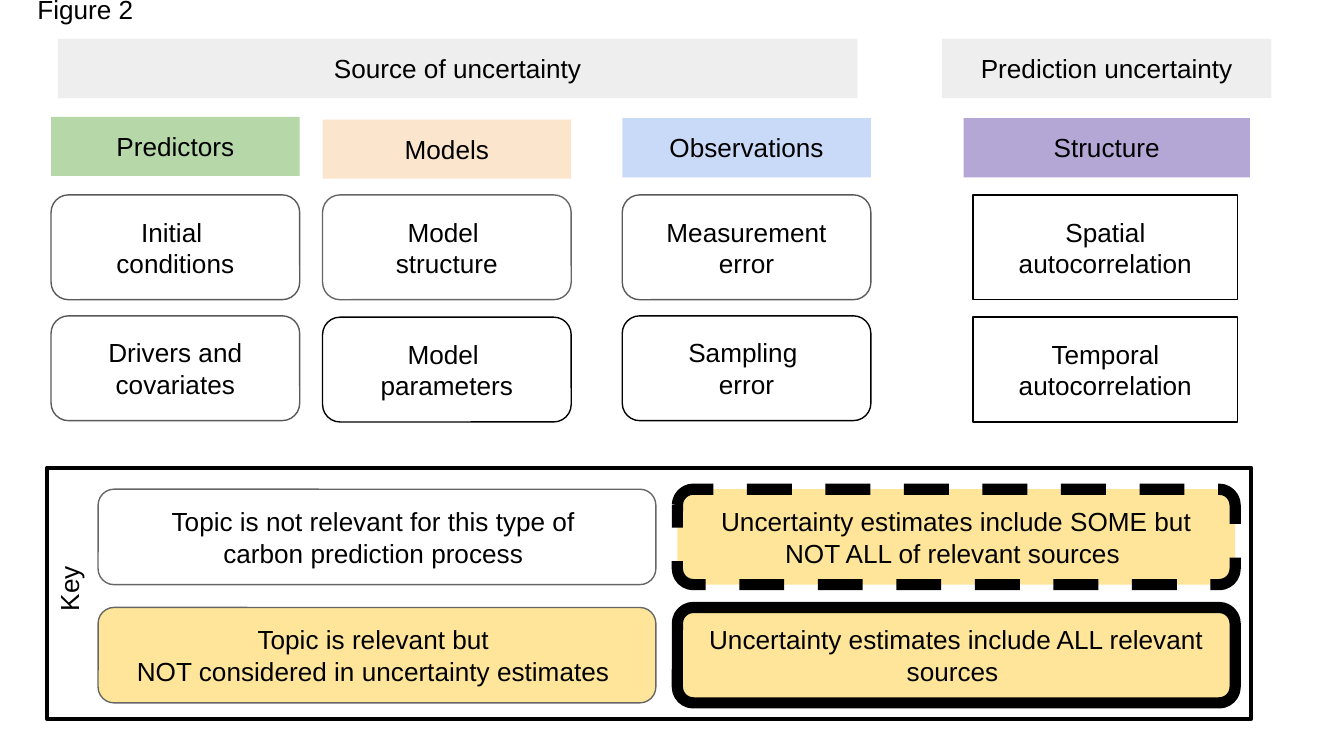
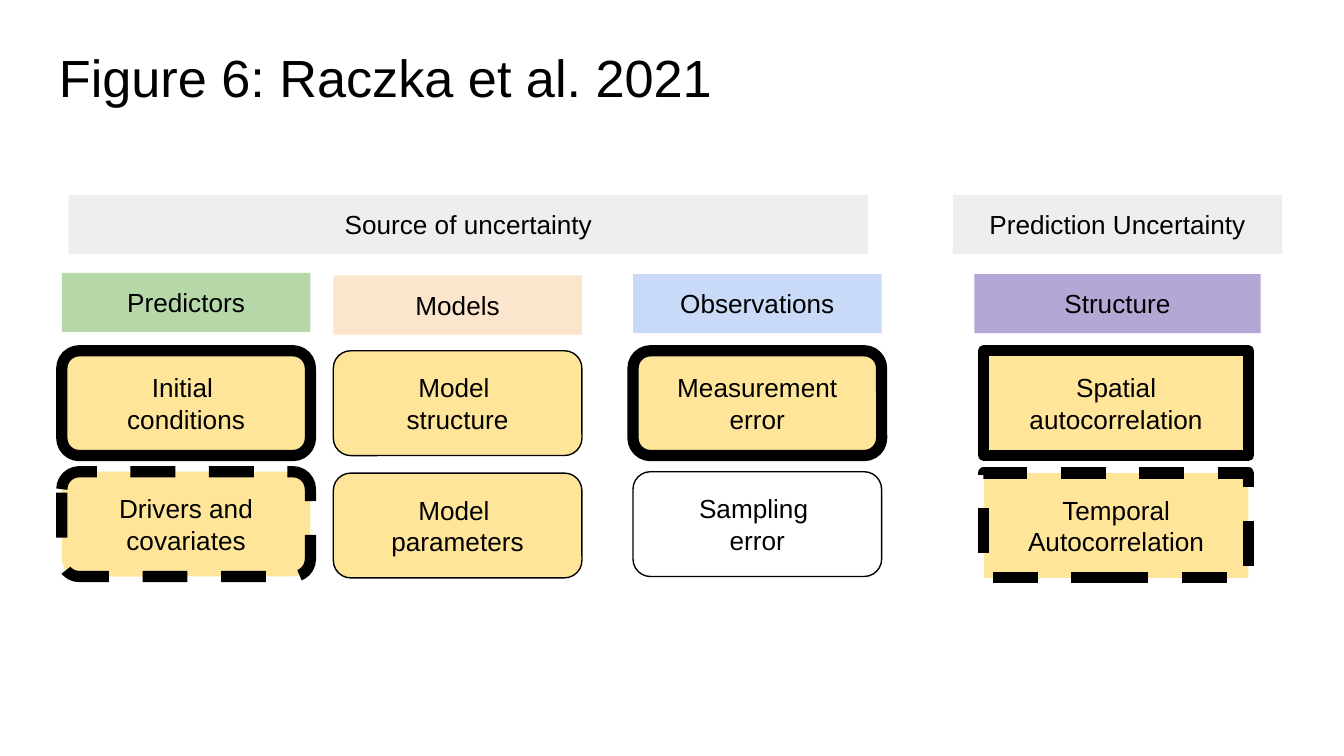
import pptx
import pptx.util
import pptx.dml.color
import pptx.enum.dml
import pptx.enum.shapes
import pptx.enum.text
import pptx.oxml.xmlchemy

PX = 9144  # EMU per px, 100 px to the inch

RGBColor = pptx.dml.color.RGBColor
BLACK = RGBColor(0x00, 0x00, 0x00)
WHITE = RGBColor(0xFF, 0xFF, 0xFF)
DARK_GRAY = RGBColor(0x59, 0x59, 0x59)
MID_GRAY = RGBColor(0x66, 0x66, 0x66)
BAND_GRAY = RGBColor(0xEE, 0xEE, 0xEE)
GREEN = RGBColor(0xB6, 0xD7, 0xA8)
PEACH = RGBColor(0xFC, 0xE5, 0xCD)
BLUE = RGBColor(0xC9, 0xDA, 0xF8)
PURPLE = RGBColor(0xB4, 0xA7, 0xD6)
YELLOW = RGBColor(0xFF, 0xE5, 0x99)

RECT = pptx.enum.shapes.MSO_SHAPE.RECTANGLE
ROUND = pptx.enum.shapes.MSO_SHAPE.ROUNDED_RECTANGLE
CENTER = pptx.enum.text.PP_ALIGN.CENTER
LEFT = pptx.enum.text.PP_ALIGN.LEFT

# Box styles: fill, line colour, line width in points, dashed
BARE = (None, None, 0, False)
OUTLINE_BLACK = (None, BLACK, 0.75, False)
OUTLINE_DARK = (None, DARK_GRAY, 0.75, False)
OUTLINE_MID = (None, MID_GRAY, 0.75, False)
WHITE_DARK = (WHITE, DARK_GRAY, 0.75, False)
PANEL = (WHITE, BLACK, 2.25, False)
RELEVANT_MID = (YELLOW, MID_GRAY, 0.75, False)
RELEVANT = (YELLOW, BLACK, 0.75, False)
SOME = (YELLOW, BLACK, 6, True)
ALL = (YELLOW, BLACK, 6, False)


def write_text(box, text, size, align, middle):
    frame = box.text_frame
    frame.word_wrap = True
    frame.margin_left = frame.margin_right = 10 * PX
    frame.margin_top = frame.margin_bottom = 10 * PX
    anchor = pptx.enum.text.MSO_ANCHOR
    frame.vertical_anchor = anchor.MIDDLE if middle else anchor.TOP
    if not middle and size == 14:
        frame.auto_size = pptx.enum.text.MSO_AUTO_SIZE.SHAPE_TO_FIT_TEXT
    for index, line in enumerate(text.split("\n")):
        para = frame.add_paragraph() if index else frame.paragraphs[0]
        para.alignment = align
        span = para.add_run()
        span.text = line
        span.font.name = "Arial"
        span.font.size = pptx.util.Pt(size)
        span.font.color.rgb = BLACK


def add_box(shapes, kind, place, style, text="", size=14, align=CENTER, middle=False):
    """Add a preset shape, or a text box when kind is None."""
    place = [length * PX for length in place]
    if kind is None:
        box = shapes.add_textbox(*place)
    else:
        fill, line_color, width, dashed = style
        box = shapes.add_shape(kind, *place)
        box.shadow.inherit = False
        if fill is None:
            box.fill.background()
        else:
            box.fill.solid()
            box.fill.fore_color.rgb = fill
        if line_color is None:
            box.line.fill.background()
        else:
            box.line.color.rgb = line_color
            box.line.width = pptx.util.Pt(width)
            if dashed:
                box.line.dash_style = pptx.enum.dml.MSO_LINE.DASH
            # Round line joins
            outline = box.line._get_or_add_ln()
            outline.append(outline.makeelement(pptx.oxml.xmlchemy.qn("a:round"), {}))
    if text:
        write_text(box, text, size, align, middle)
    return box


deck = pptx.Presentation()
deck.slide_width = 1000 * PX
deck.slide_height = deck.slide_width * 9 // 16
blank = deck.slide_layouts[6]

# Columns: heading, colour, heading left, top and width,
# box shape, box left and width, tops of the two boxes
BAND_TOP, BAND_HEIGHT, BOX_HEIGHT = 29, 44, 78
COLUMNS = [
    ("Models", PEACH, 240, 89, 185, ROUND, 240, 185, (145, 236)),
    ("Observations", BLUE, 463, 88, 185, ROUND, 463, 185, (145, 235)),
    ("Structure", PURPLE, 717, 88, 213, RECT, 724, 197, (145, 236)),
    ("Predictors", GREEN, 38, 87, 185, ROUND, 38, 185, (145, 235)),
]
TOPICS = [
    ("Model \nstructure", "Model \nparameters"),
    ("Measurement error", "Sampling \nerror"),
    ("Spatial autocorrelation", "Temporal autocorrelation"),
    ("Initial \nconditions", "Drivers and covariates"),
]

# Figures: shift right and down, last band text, last structure topic, box styles
FIGURES = [
    (0, 0, "Prediction uncertainty", "Temporal autocorrelation",
     [(OUTLINE_MID, OUTLINE_BLACK), (OUTLINE_DARK, OUTLINE_BLACK),
      (OUTLINE_BLACK, OUTLINE_BLACK), (WHITE_DARK, WHITE_DARK)]),
    (8, 116, "Prediction Uncertainty", "Temporal Autocorrelation",
     [(RELEVANT, RELEVANT), (ALL, OUTLINE_BLACK), (ALL, SOME), (ALL, SOME)]),
]

# Uncertainty grid on both slides
pages = []
for right, down, prediction, temporal, styles in FIGURES:
    page = deck.slides.add_slide(blank)
    pages.append(page)
    for column, topics, column_styles in zip(COLUMNS, TOPICS, styles):
        heading, color, left, top, width, kind, box_left, box_width, box_tops = column
        for topic, style, box_top in zip(topics, column_styles, box_tops):
            if topic == "Temporal autocorrelation":
                topic = temporal
            place = (box_left + right, box_top + down, box_width, BOX_HEIGHT)
            add_box(page.shapes, kind, place, style, topic, middle=True)
        place = (left + right, top + down, width, BAND_HEIGHT)
        add_box(page.shapes, RECT, place, (color, None, 0, False), heading)
    for band, left, width in [("Source of uncertainty", 43, 595), (prediction, 701, 245)]:
        place = (left + right, BAND_TOP + down, width, BAND_HEIGHT)
        add_box(page.shapes, RECT, place, (BAND_GRAY, None, 0, False), band)

# Slide 1: key, two by two
key = pages[0].shapes.add_group_shape().shapes
add_box(key, RECT, (35, 348, 896, 187), PANEL)
KEY_ENTRIES = [
    (OUTLINE_MID, "Topic is not relevant for this type of \ncarbon prediction process "),
    (RELEVANT_MID, "Topic is relevant but \nNOT considered in uncertainty estimates "),
    (SOME, "Uncertainty estimates include SOME but NOT ALL of relevant sources "),
    (ALL, "Uncertainty estimates include ALL relevant sources "),
]
for index, (style, meaning) in enumerate(KEY_ENTRIES):
    place = (73 + index // 2 * 431, 364 + index % 2 * 88, 415, 71)
    add_box(key, ROUND, place, style, meaning, middle=True)
add_box(key, None, (9, 416, 85, 44), BARE, "Key").rotation = 270

# Titles
add_box(pages[0].shapes, None, (18, -15, 104, 44), BARE, "Figure 2", align=LEFT)
add_box(pages[1].shapes, None, (34, 24, 932, 98), BARE,
        "Figure 6: Raczka et al. 2021", size=28, align=LEFT)

deck.save("out.pptx")
